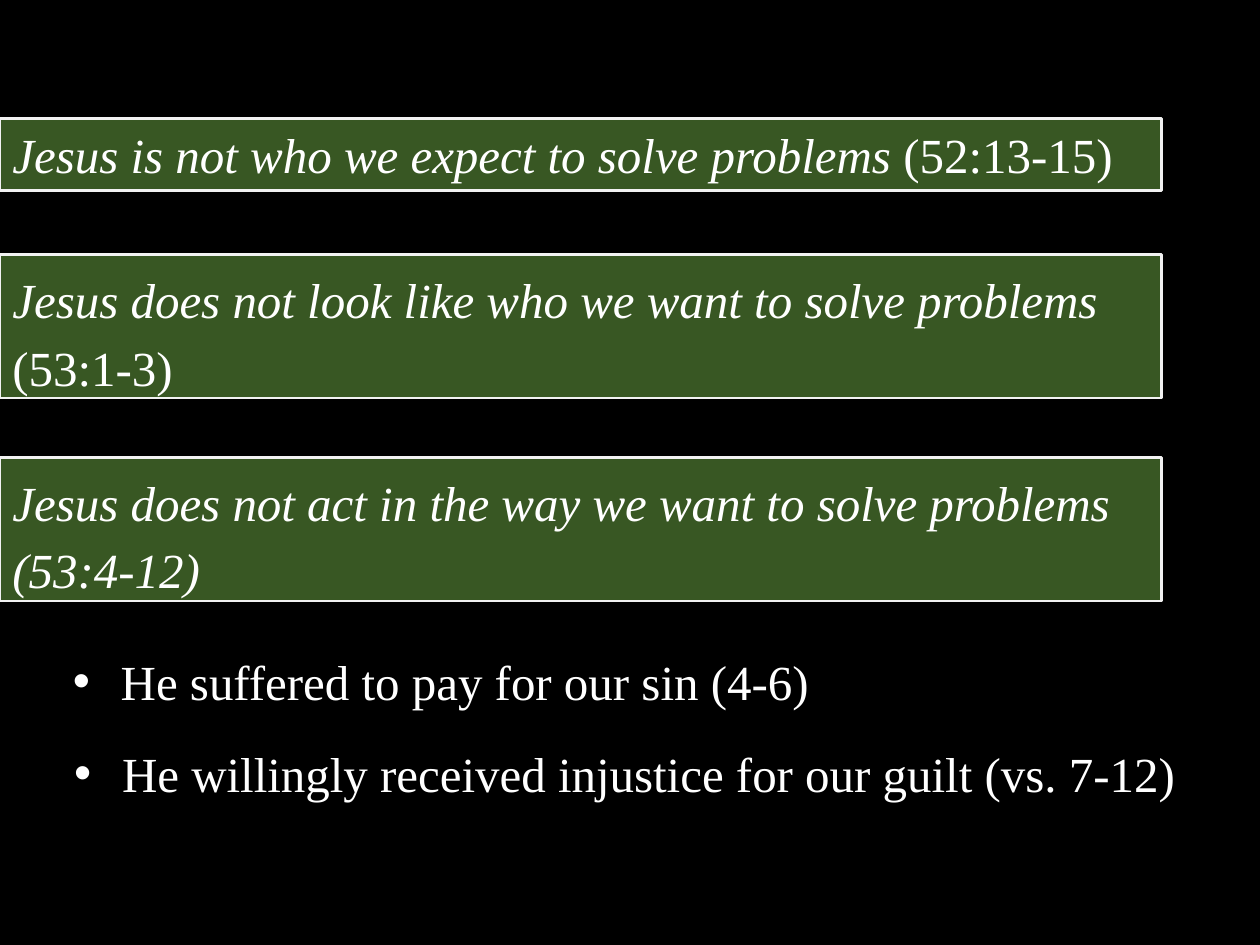
from dataclasses import dataclass

from lxml import etree
from pptx import Presentation
from pptx.dml.color import RGBColor
from pptx.enum import shapes, text
from pptx.oxml import ns
from pptx.util import Inches, Pt


@dataclass(frozen=True)
class Theme:
    backdrop: RGBColor = RGBColor(0x00, 0x00, 0x00)
    banner: RGBColor = RGBColor(0x38, 0x57, 0x23)
    border: RGBColor = RGBColor(0xF2, 0xF2, 0xF2)
    ink: RGBColor = RGBColor(0xFF, 0xFF, 0xFF)
    font: str = "Times New Roman"
    size: Pt = Pt(28)


THEME = Theme()
BANNER_WIDTH = 9.22
BULLET_INDENT = 0.38


def add_panel(slide, top, width, height, fill, line, line_width):
    """Bordered rectangle starting at the left edge of the slide."""
    panel = slide.shapes.add_shape(
        shapes.MSO_SHAPE.RECTANGLE, 0, Inches(top), Inches(width), Inches(height))
    panel.shadow.inherit = False
    panel.fill.solid()
    panel.fill.fore_color.rgb = fill
    panel.line.color.rgb = line
    panel.line.width = Pt(line_width)
    return panel


def style_paragraph(paragraph, line_spacing=None, before=None, after=None):
    paragraph.alignment = text.PP_ALIGN.LEFT
    paragraph.line_spacing = line_spacing
    if before is not None:
        paragraph.space_before = Pt(before)
    if after is not None:
        paragraph.space_after = Pt(after)
    paragraph.font.name = THEME.font
    paragraph.font.size = THEME.size
    paragraph.font.color.rgb = THEME.ink


def add_banner(slide, top, height, statement, verses="", **spacing):
    """Green banner: italic statement, then upright verse reference."""
    banner = add_panel(slide, top, BANNER_WIDTH, height,
                       THEME.banner, THEME.border, 1.5)
    frame = banner.text_frame
    frame.word_wrap = True
    frame.vertical_anchor = text.MSO_ANCHOR.TOP
    paragraph = frame.paragraphs[0]
    style_paragraph(paragraph, **spacing)
    for wording, italic in ((statement, True), (verses, False)):
        if wording:
            run = paragraph.add_run()
            run.text = wording
            run.font.italic = italic
            run.font.name = THEME.font
            run.font.size = THEME.size
            run.font.color.rgb = THEME.ink


def add_bullet(slide, left, top, width, wording):
    point = slide.shapes.add_textbox(
        Inches(left), Inches(top), Inches(width), Inches(0.61))
    frame = point.text_frame
    frame.word_wrap = True
    paragraph = frame.paragraphs[0]
    paragraph.text = wording
    style_paragraph(paragraph, line_spacing=1.15, before=12, after=8)

    # Hanging indent and bullet sign, placed ahead of the font defaults
    properties = paragraph._p.get_or_add_pPr()
    properties.set("marL", str(Inches(BULLET_INDENT)))
    properties.set("indent", str(-Inches(BULLET_INDENT)))
    bullet_font = etree.Element(ns.qn("a:buFont"), typeface="Arial")
    bullet_sign = etree.Element(ns.qn("a:buChar"), char="•")
    defaults = properties.find(ns.qn("a:defRPr"))
    defaults.addprevious(bullet_font)
    defaults.addprevious(bullet_sign)

    run = paragraph.runs[0]
    run.font.name = THEME.font
    run.font.size = THEME.size
    run.font.color.rgb = THEME.ink


def main():
    deck = Presentation()
    deck.slide_width, deck.slide_height = Inches(10), Inches(7.5)
    slide = deck.slides.add_slide(deck.slide_layouts[6])

    # Black backdrop
    add_panel(slide, 0, 10, 7.5, THEME.backdrop, THEME.backdrop, 1)

    # Three main statements
    add_banner(slide, 0.94, 0.57,
               "Jesus is not who we expect to solve problems ", "(52:13-15)")
    add_banner(slide, 2.02, 1.14,
               "Jesus does not look like who we want to solve problems ",
               "(53:1-3)", line_spacing=1.15, after=12)
    add_banner(slide, 3.63, 1.14,
               "Jesus does not act in the way we want to solve problems (53:4-12)",
               line_spacing=1.15, before=12)

    # Points under the last statement
    add_bullet(slide, 0.48, 5.05, 6.1, "He suffered to pay for our sin (4-6)")
    add_bullet(slide, 0.49, 5.78, 9.11,
               "He willingly received injustice for our guilt (vs. 7-12)")

    deck.save("out.pptx")


if __name__ == "__main__":
    main()
